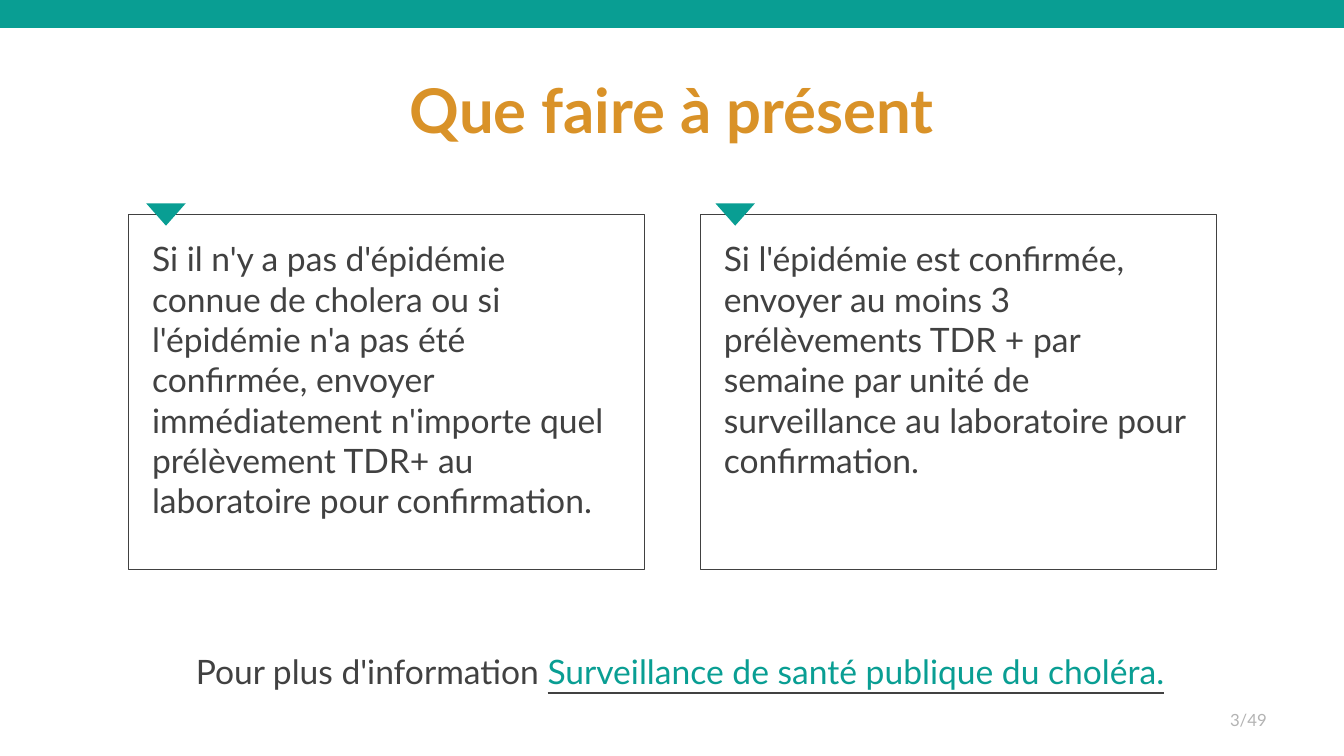
from dataclasses import dataclass

from lxml import etree
from pptx import Presentation
from pptx.dml.color import RGBColor
from pptx.enum import shapes, text
from pptx.oxml import ns
from pptx.util import Pt


@dataclass(frozen=True)
class Theme:
    teal: str = "099E93"
    orange: str = "D99228"
    ink: str = "414141"
    grey: str = "B3B3B3"
    font: str = "Lato"
    title: int = 44
    body: int = 24
    page: int = 12


theme = Theme()


def rgb(code):
    return RGBColor.from_string(code)


def write(p, words, size=theme.body, color=theme.ink, bold=False,
          align=text.PP_ALIGN.LEFT, spacing=1.0, underline=None):
    """Append a run to paragraph p; underline is the colour of its line."""
    p.alignment = align
    p.line_spacing = spacing
    r = p.add_run()
    r.text = words
    r.font.name = theme.font
    r.font.size = Pt(size)
    r.font.bold = bold
    r.font.color.rgb = rgb(color)
    if underline:
        r.font.underline = True
        line_fill = etree.Element(ns.qn("a:uFill"))
        solid = etree.SubElement(line_fill, ns.qn("a:solidFill"))
        etree.SubElement(solid, ns.qn("a:srgbClr"), val=underline)
        r.font.fill._xPr.find(ns.qn("a:latin")).addprevious(line_fill)


prs = Presentation()
prs.slide_width, prs.slide_height = Pt(960), Pt(540)
s = prs.slides.add_slide(prs.slide_layouts[5])

# Top band
band = s.shapes.add_shape(shapes.MSO_SHAPE.RECTANGLE, 0, 0, prs.slide_width, Pt(20))
band.shadow.inherit = False
band.fill.solid()
band.fill.fore_color.rgb = rgb(theme.teal)
band.line.fill.background()

# Title
title = s.shapes.title
title.left, title.top, title.width, title.height = Pt(66), Pt(28.8), Pt(828), Pt(104.4)
tf = title.text_frame
tf.vertical_anchor = text.MSO_ANCHOR.MIDDLE
write(tf.paragraphs[0], "Que faire à présent", size=theme.title, color=theme.orange,
      bold=True, align=text.PP_ALIGN.CENTER, spacing=0.9)

# Two framed cases, each with a marker on its top edge
cases = [
    (91.6, 104.4, "Si il n'y a pas d'épidémie connue de cholera ou si l'épidémie n'a pas "
     "été confirmée, envoyer immédiatement n'importe quel prélèvement TDR+ au "
     "laboratoire pour confirmation."),
    (500, 511, "Si l'épidémie est confirmée, envoyer au moins 3 prélèvements TDR + par "
     "semaine par unité de surveillance au laboratoire pour confirmation."),
]
for left, marker_left, words in cases:
    box = s.shapes.add_shape(shapes.MSO_SHAPE.RECTANGLE,
                             Pt(left), Pt(153.2), Pt(368.6), Pt(253.5))
    box.shadow.inherit = False
    box.fill.background()
    box.line.color.rgb = rgb(theme.ink)
    box.line.width = Pt(0.5)
    tf = box.text_frame
    tf.word_wrap = True
    tf.vertical_anchor = text.MSO_ANCHOR.TOP
    tf.margin_left = tf.margin_right = tf.margin_top = tf.margin_bottom = Pt(17)
    write(tf.paragraphs[0], words)

    marker = s.shapes.add_shape(shapes.MSO_SHAPE.ISOSCELES_TRIANGLE,
                                Pt(marker_left), Pt(145.2), Pt(28.3), Pt(16))
    marker.rotation = 180
    marker.shadow.inherit = False
    marker.fill.solid()
    marker.fill.fore_color.rgb = rgb(theme.teal)
    marker.line.fill.background()

# Further reading
tf = s.shapes.add_textbox(Pt(132.8), Pt(461.5), Pt(736), Pt(36)).text_frame
tf.word_wrap = True
p = tf.paragraphs[0]
write(p, "Pour plus d'information ")
write(p, "Surveillance de santé publique du choléra.", color=theme.teal,
      underline=theme.ink)

# Page number
tf = s.shapes.add_textbox(Pt(696), Pt(500.4), Pt(216), Pt(28.8)).text_frame
tf.word_wrap = True
tf.vertical_anchor = text.MSO_ANCHOR.MIDDLE
write(tf.paragraphs[0], "3/49", size=theme.page, color=theme.grey,
      align=text.PP_ALIGN.RIGHT, spacing=0.9)

prs.save("out.pptx")
